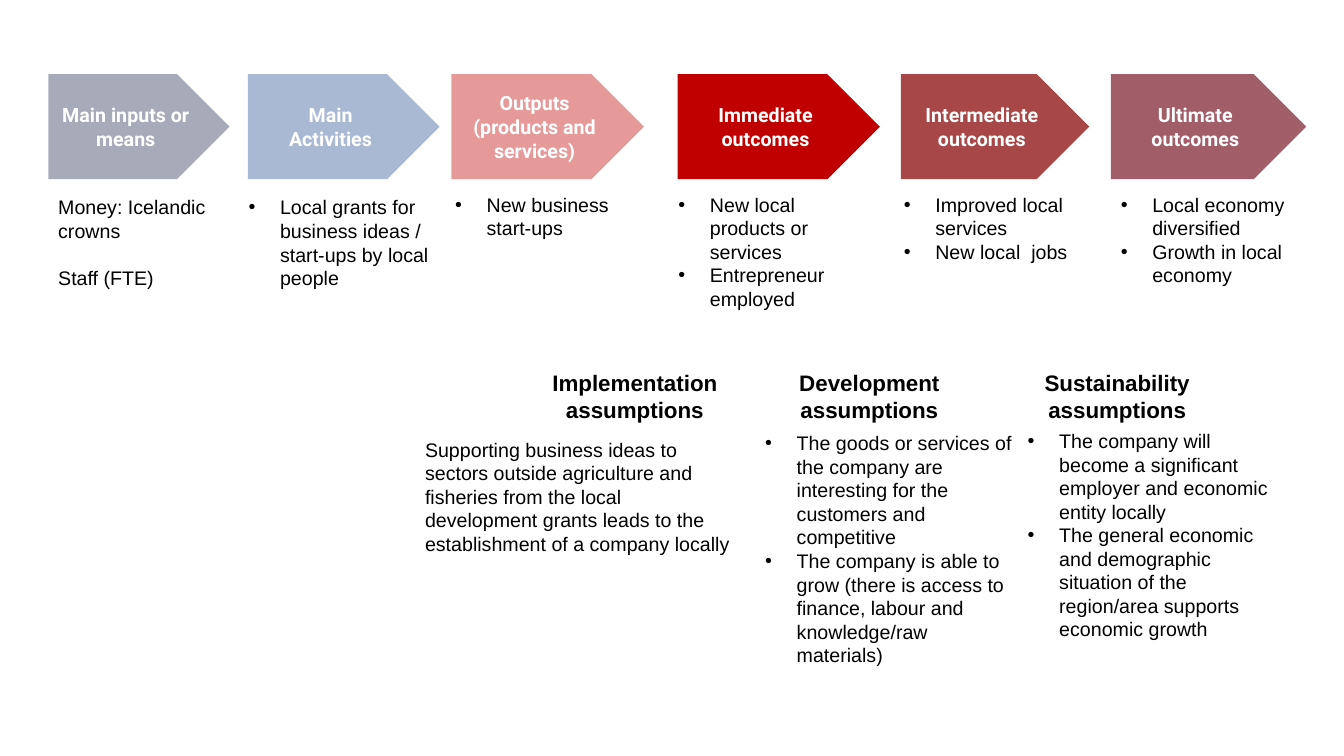
import pptx
import pptx.dml.color
import pptx.enum.shapes
import pptx.enum.text
import pptx.oxml
import pptx.oxml.ns
import pptx.util

Pt = pptx.util.Pt
ALIGN = pptx.enum.text.PP_ALIGN
ANCHOR = pptx.enum.text.MSO_ANCHOR
BULLET_INDENT = 22.5


def colour(value):
    return pptx.dml.color.RGBColor.from_string(value)


def add_element(parent, tag, **attributes):
    element = pptx.oxml.parse_xml(f'<a:{tag} {pptx.oxml.ns.nsdecls("a")}/>')
    for name, value in attributes.items():
        element.set(name, str(value))
    parent.append(element)
    return element


class SlideBuilder:
    """Holds the text styles and the current slide."""

    styles = {
        "stage": ({"name": "Roboto", "size": Pt(14), "bold": True}, "FFFFFF"),
        "heading": ({"name": "Arial", "size": Pt(16), "bold": True}, "000000"),
        "body": ({"name": "Arial", "size": Pt(14), "bold": False}, "000000"),
    }

    def __init__(self, page):
        self.page = page

    def fill_text(self, frame, paragraphs, style, align=None, bullets=False, gap=0):
        frame.word_wrap = True
        font_values, font_colour = self.styles[style]
        for index, text in enumerate(paragraphs):
            para = frame.paragraphs[0] if index == 0 else frame.add_paragraph()
            if align is not None:
                para.alignment = align
            if index and gap:
                para.space_before = Pt(gap)
            if bullets:
                self.bullet(para)
            span = para.add_run()
            span.text = text
            for name, value in font_values.items():
                setattr(span.font, name, value)
            span.font.color.rgb = colour(font_colour)

    def bullet(self, para):
        properties = para._p.get_or_add_pPr()
        properties.set("marL", str(Pt(BULLET_INDENT)))
        properties.set("indent", str(-Pt(BULLET_INDENT)))
        bullet_colour = add_element(properties, "buClr")
        add_element(bullet_colour, "srgbClr", val="000000")
        add_element(properties, "buFont", typeface="Arial")
        add_element(properties, "buChar", char="•")

    def arrow(self, left, top, width, height, fill, opacity, paragraphs):
        shape = self.page.shapes.add_shape(
            pptx.enum.shapes.MSO_SHAPE.PENTAGON,
            Pt(left), Pt(top), Pt(width), Pt(height))
        shape.shadow.inherit = False
        shape.line.fill.background()
        shape.fill.solid()
        shape.fill.fore_color.rgb = colour(fill)
        if opacity < 100:
            fill_colour = shape._element.spPr.find(
                f'{pptx.oxml.ns.qn("a:solidFill")}/{pptx.oxml.ns.qn("a:srgbClr")}')
            add_element(fill_colour, "alpha", val=opacity * 1000)
        shape.text_frame.vertical_anchor = ANCHOR.MIDDLE
        self.fill_text(shape.text_frame, paragraphs, "stage", ALIGN.CENTER)

    def text(self, left, top, width, height, paragraphs, style="body", **options):
        box = self.page.shapes.add_textbox(Pt(left), Pt(top), Pt(width), Pt(height))
        box.text_frame.auto_size = pptx.enum.text.MSO_AUTO_SIZE.SHAPE_TO_FIT_TEXT
        self.fill_text(box.text_frame, paragraphs, style, **options)


def main():
    deck = pptx.Presentation()
    deck.slide_width, deck.slide_height = Pt(960), Pt(540)
    builder = SlideBuilder(deck.slides.add_slide(deck.slide_layouts[6]))

    # Stages of the results chain: left, width, fill, opacity, label
    stages = [
        (34.5, 129.5, "293156", 41, ["Main inputs or means"]),
        (177, 137, "2F5597", 41, ["Main", "Activities"]),
        (322.5, 137.5, "C00000", 40, ["Outputs", "(products and services)"]),
        (484, 144.5, "C00000", 100, ["Immediate outcomes"]),
        (643.5, 134.5, "A74747", 100, ["Intermediate outcomes"]),
        (793.5, 139.5, "A15D68", 100, ["Ultimate outcomes"]),
    ]
    for left, width, fill, opacity, label in stages:
        builder.arrow(left, 53, width, 75, fill, opacity, label)

    # Example under each stage
    builder.text(34.5, 136, 136, 116.5,
                 ["Money: Icelandic crowns", "Staff (FTE)"], gap=17)
    examples = [
        (170.5, 136, 152, 94.5,
         ["Local grants for business ideas / start-ups by local people"]),
        (318, 134, 137.5, 51, ["New business start-ups"]),
        (477.5, 134, 151, 116.5,
         ["New local products or services", "Entrepreneur employed"]),
        (638.5, 134, 139.5, 94.5,
         ["Improved local services", "New local  jobs"]),
        (793.5, 134, 139.5, 138,
         ["Local economy diversified", "Growth in local economy"]),
    ]
    for *place, paragraphs in examples:
        builder.text(*place, paragraphs, bullets=True)

    # Headings of the assumptions
    for left, kind in [(382.5, "Implementation"), (550, "Development"),
                       (727, "Sustainability")]:
        builder.text(left, 260, 142, 46, [f"{kind} assumptions"],
                     "heading", align=ALIGN.CENTER)

    # Assumptions
    builder.text(296.5, 309, 237, 92, [
        "Supporting business ideas to sectors outside agriculture and fisheries "
        "from the local development grants leads to the establishment of a "
        "company locally"])
    assumptions = [
        (539.5, 304.5, 192.5, 196.5, [
            "The goods or services of the company are interesting for the "
            "customers and competitive",
            "The company is able to grow (there is access to finance, labour "
            "and knowledge/raw materials)"]),
        (727, 303, 193, 160, [
            "The company will become a significant employer and economic "
            "entity locally",
            "The general economic and demographic situation of the region/area "
            "supports economic growth"]),
    ]
    for *place, paragraphs in assumptions:
        builder.text(*place, paragraphs, bullets=True)

    deck.save("out.pptx")


if __name__ == "__main__":
    main()
